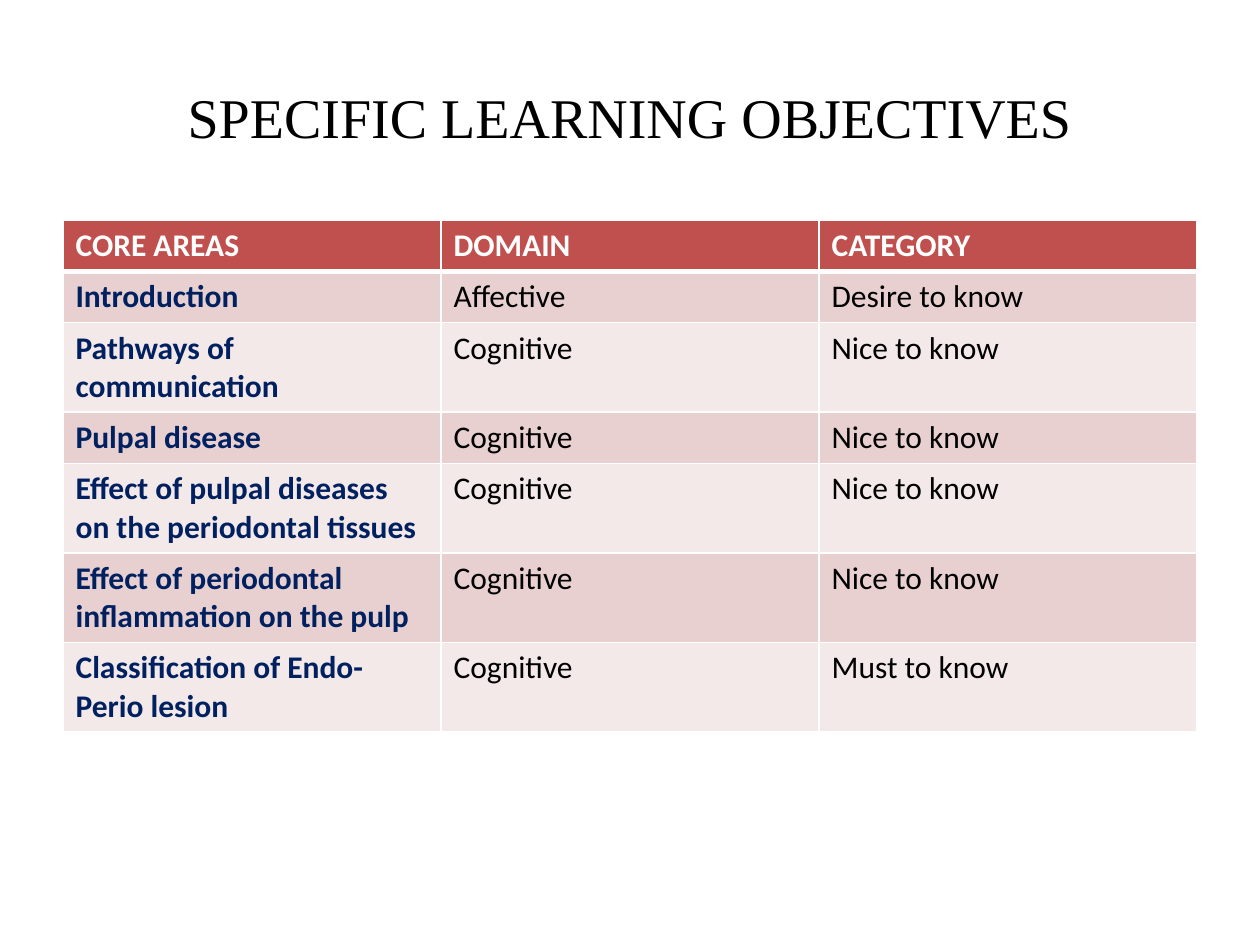
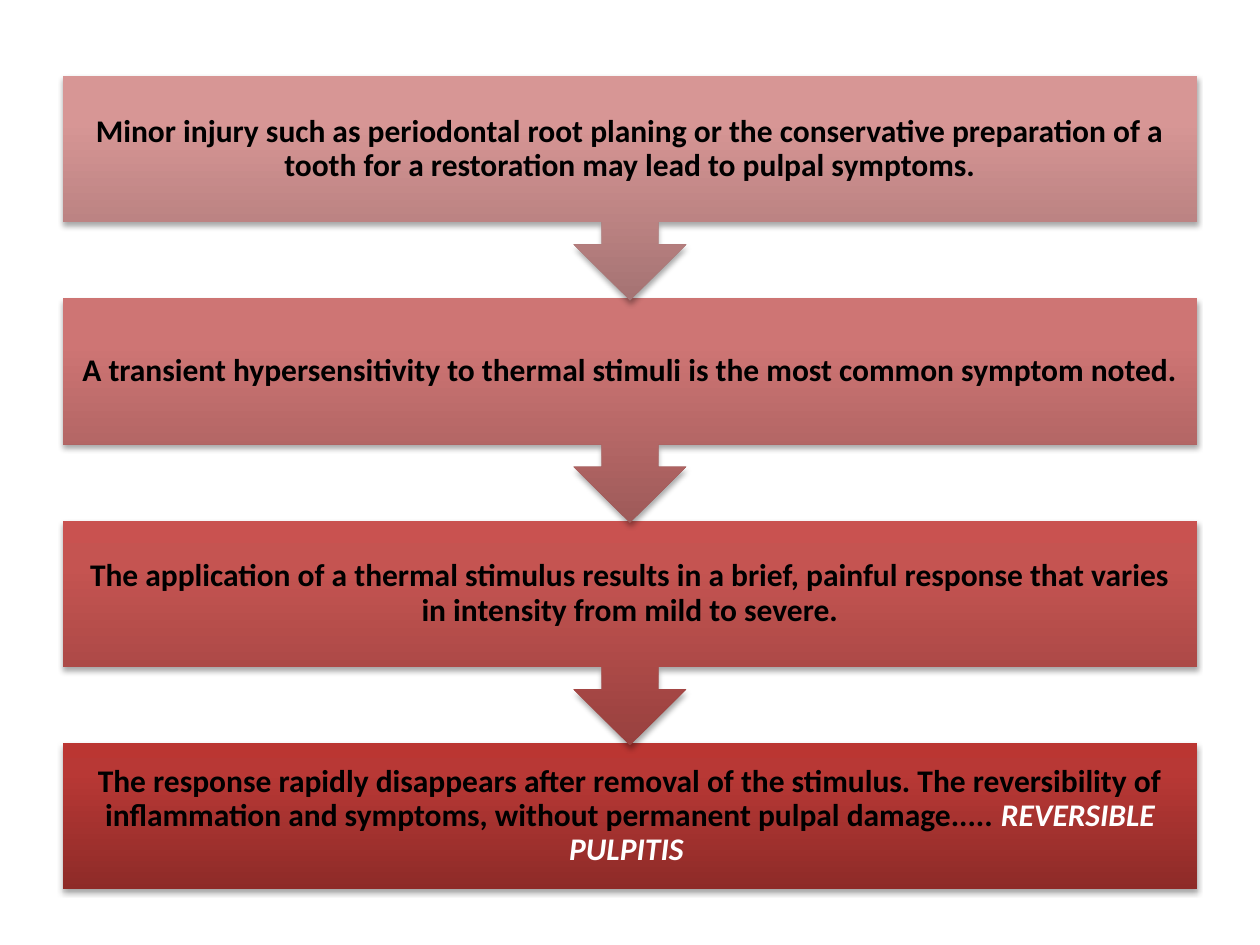
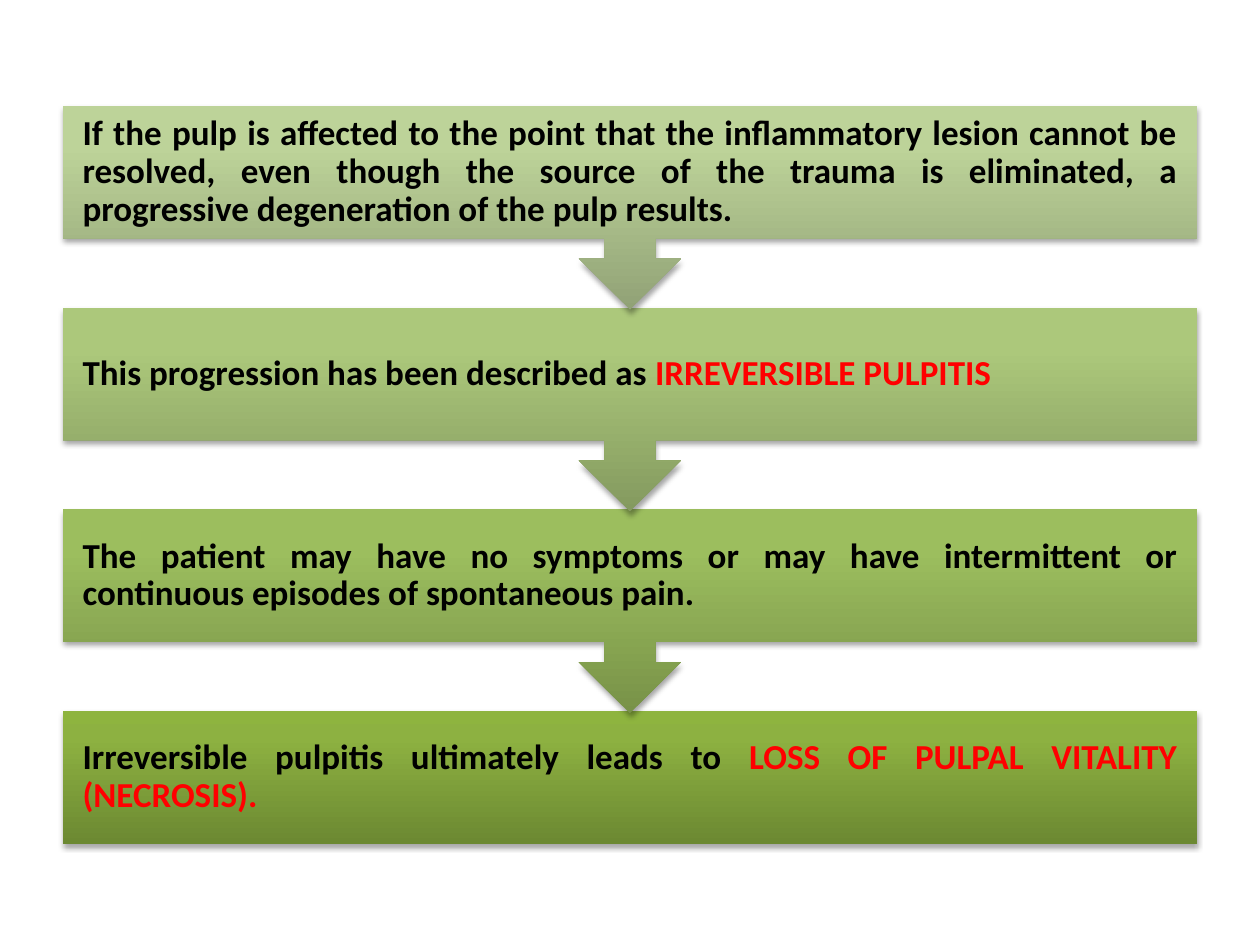
from dataclasses import dataclass

from lxml import etree
from pptx import Presentation
from pptx.dml.color import RGBColor
from pptx.enum import shapes, text
from pptx.oxml import ns
from pptx.util import Pt


@dataclass(frozen=True)
class Theme:
    title_font: str = "Times New Roman"
    body_font: str = "Calibri"
    title_size: int = 32
    table_size: int = 18
    black: str = "000000"
    white: str = "FFFFFF"
    navy: str = "002060"
    red: str = "FF0000"
    header: str = "C0504D"
    bands: tuple = ("E8D0D0", "F4E9E9")
    left: float = 36
    width: float = 648


@dataclass(frozen=True)
class FlowStyle:
    top: float
    pitch: float
    callout_height: float
    inset: float
    size: int
    align: int
    gradients: tuple


THEME = Theme()
BOX_SHARE = 0.65
ARROW_SHARES = (0.25, 0.25, 0.25, BOX_SHARE)

RED_FLOW = FlowStyle(
    43.4, 127.1, 128.4, 10.1, 18, text.PP_ALIGN.CENTER,
    (("A57373", "D79695", "D99594"), ("9E5A59", "CE7574", "D07472"),
     ("98413F", "C55451", "C95250"), ("8E2B28", "B83835", "BB3632")))
GREEN_FLOW = FlowStyle(
    60.5, 115.3, 116.5, 11.2, 20, text.PP_ALIGN.JUSTIFY,
    (("91A276", "BDD399", "BED599"), ("849A5F", "ACC87B", "ADCB7B"),
     ("789248", "9CBE5E", "9EC05C"), ("6C8932", "8DB141", "8EB43F")))

OBJECTIVES = (
    ("CORE AREAS", "DOMAIN", "CATEGORY"),
    ("Introduction", "Affective", "Desire to know"),
    ("Pathways of communication", "Cognitive", "Nice to know"),
    ("Pulpal disease", "Cognitive", "Nice to know"),
    ("Effect of pulpal diseases on the periodontal tissues", "Cognitive", "Nice to know"),
    ("Effect of periodontal inflammation on the pulp", "Cognitive", "Nice to know"),
    ("Classification of Endo-Perio lesion", "Cognitive", "Must to know"),
)

REVERSIBLE_STEPS = (
    ("Minor injury such as periodontal root planing or the conservative preparation "
     "of a tooth for a restoration may lead to pulpal symptoms.",),
    ("A transient hypersensitivity to thermal stimuli is the most common symptom noted. ",),
    ("The application of a thermal stimulus results in a brief, painful response that "
     "varies in intensity from mild to severe.",),
    ("The response rapidly disappears after removal of the stimulus. The reversibility "
     "of inflammation and symptoms, without permanent pulpal damage..... ",
     "REVERSIBLE PULPITIS "),
)

IRREVERSIBLE_STEPS = (
    ("If the pulp is affected to the point that the inflammatory lesion cannot be "
     "resolved, even though the source of the trauma is eliminated, a progressive "
     "degeneration of the pulp results. ",),
    ("This progression has been described as ", "IRREVERSIBLE PULPITIS"),
    ("The patient may have no symptoms or may have intermittent or continuous episodes "
     "of spontaneous pain. ",),
    ("Irreversible pulpitis ultimately leads to ", "LOSS OF PULPAL VITALITY (NECROSIS)."),
)


def rgb(value):
    return RGBColor.from_string(value)


def child(parent, tag, **attrs):
    return etree.SubElement(parent, ns.qn(tag), {k: str(v) for k, v in attrs.items()})


def set_font(font, name, size, color=None, bold=None):
    font.name = name
    font.size = Pt(size)
    font.bold = bold
    if color:
        font.color.rgb = rgb(color)


def add_title(slide, words):
    title = slide.shapes.title
    title.left, title.top = Pt(THEME.left), Pt(21.6)
    title.width, title.height = Pt(THEME.width), Pt(90)
    title.text_frame.text = words
    p = title.text_frame.paragraphs[0]
    p.alignment = text.PP_ALIGN.CENTER
    set_font(p.font, THEME.title_font, THEME.title_size, THEME.black)


def set_borders(cell, top=1, bottom=1):
    tc_pr = cell._tc.get_or_add_tcPr()
    sides = (("a:lnL", 1), ("a:lnR", 1), ("a:lnT", top), ("a:lnB", bottom))
    for i, (tag, width) in enumerate(sides):
        line = child(tc_pr, tag, w=Pt(width))
        child(child(line, "a:solidFill"), "a:srgbClr", val=THEME.white)
        tc_pr.insert(i, line)


def add_table(slide, rows):
    row_height = 29.2
    columns = len(rows[0])
    table = slide.shapes.add_table(
        len(rows), columns, Pt(THEME.left), Pt(126),
        Pt(THEME.width), Pt(row_height * len(rows))).table
    for r, row in enumerate(rows):
        for c, words in enumerate(row):
            cell = table.cell(r, c)
            cell.text = words
            cell.fill.solid()
            cell.fill.fore_color.rgb = rgb(THEME.bands[(r - 1) % 2] if r else THEME.header)
            set_borders(cell, top=3 if r == 1 else 1, bottom=1 if r else 3)
            color = THEME.white if r == 0 else THEME.navy if c == 0 else THEME.black
            set_font(cell.text_frame.paragraphs[0].font, THEME.body_font,
                     THEME.table_size, color, r == 0 or c == 0)


def set_gradient(sp, colors):
    sp.fill.gradient()
    sp.fill.gradient_angle = 90
    stops = sp._element.spPr.find(".//" + ns.qn("a:gsLst"))
    for stop in list(stops):
        stops.remove(stop)
    for pos, color in zip((0, 80000, 100000), colors):
        child(child(stops, "a:gs", pos=pos), "a:srgbClr", val=color)


def set_shadow(sp):
    sp.shadow.inherit = False
    effects = sp._element.spPr.find(ns.qn("a:effectLst"))
    shadow = child(effects, "a:outerShdw", blurRad=Pt(3.1), dist=Pt(1.8),
                   dir=5400000, rotWithShape=0)
    child(child(shadow, "a:srgbClr", val=THEME.black), "a:alpha", val=35000)


def add_step(slide, kind, top, height, style, colors, runs, accent, italic):
    sp = slide.shapes.add_shape(kind, Pt(THEME.left), Pt(top), Pt(THEME.width), Pt(height))
    if kind == shapes.MSO_SHAPE.DOWN_ARROW_CALLOUT:
        for i, share in enumerate(ARROW_SHARES):
            sp.adjustments[i] = share
    set_gradient(sp, colors)
    sp.line.fill.background()
    set_shadow(sp)
    tf = sp.text_frame
    tf.word_wrap = True
    tf.vertical_anchor = text.MSO_ANCHOR.MIDDLE
    tf.margin_left = tf.margin_right = tf.margin_top = tf.margin_bottom = Pt(style.inset)
    p = tf.paragraphs[0]
    p.alignment = style.align
    p.line_spacing = 0.9
    set_font(p.font, THEME.body_font, style.size, bold=True)
    for i, words in enumerate(runs):
        r = p.add_run()
        r.text = words
        r.font.color.rgb = rgb(accent if i else THEME.black)
        if i and italic:
            r.font.italic = True


def add_flow(slide, steps, style, accent, italic=False):
    last = len(steps) - 1
    for i in range(last, -1, -1):
        if i == last:
            kind, height = shapes.MSO_SHAPE.RECTANGLE, style.callout_height * BOX_SHARE
        else:
            kind, height = shapes.MSO_SHAPE.DOWN_ARROW_CALLOUT, style.callout_height
        add_step(slide, kind, style.top + i * style.pitch, height, style,
                 style.gradients[i], steps[i], accent, italic)


def main():
    prs = Presentation()
    prs.slide_width, prs.slide_height = Pt(720), Pt(540)
    title_only, blank = prs.slide_layouts[5], prs.slide_layouts[6]

    s = prs.slides.add_slide(title_only)
    add_title(s, "SPECIFIC LEARNING OBJECTIVES")
    add_table(s, OBJECTIVES)

    add_flow(prs.slides.add_slide(blank), REVERSIBLE_STEPS, RED_FLOW, THEME.white, italic=True)
    add_flow(prs.slides.add_slide(blank), IRREVERSIBLE_STEPS, GREEN_FLOW, THEME.red)

    prs.save("out.pptx")


if __name__ == "__main__":
    main()
